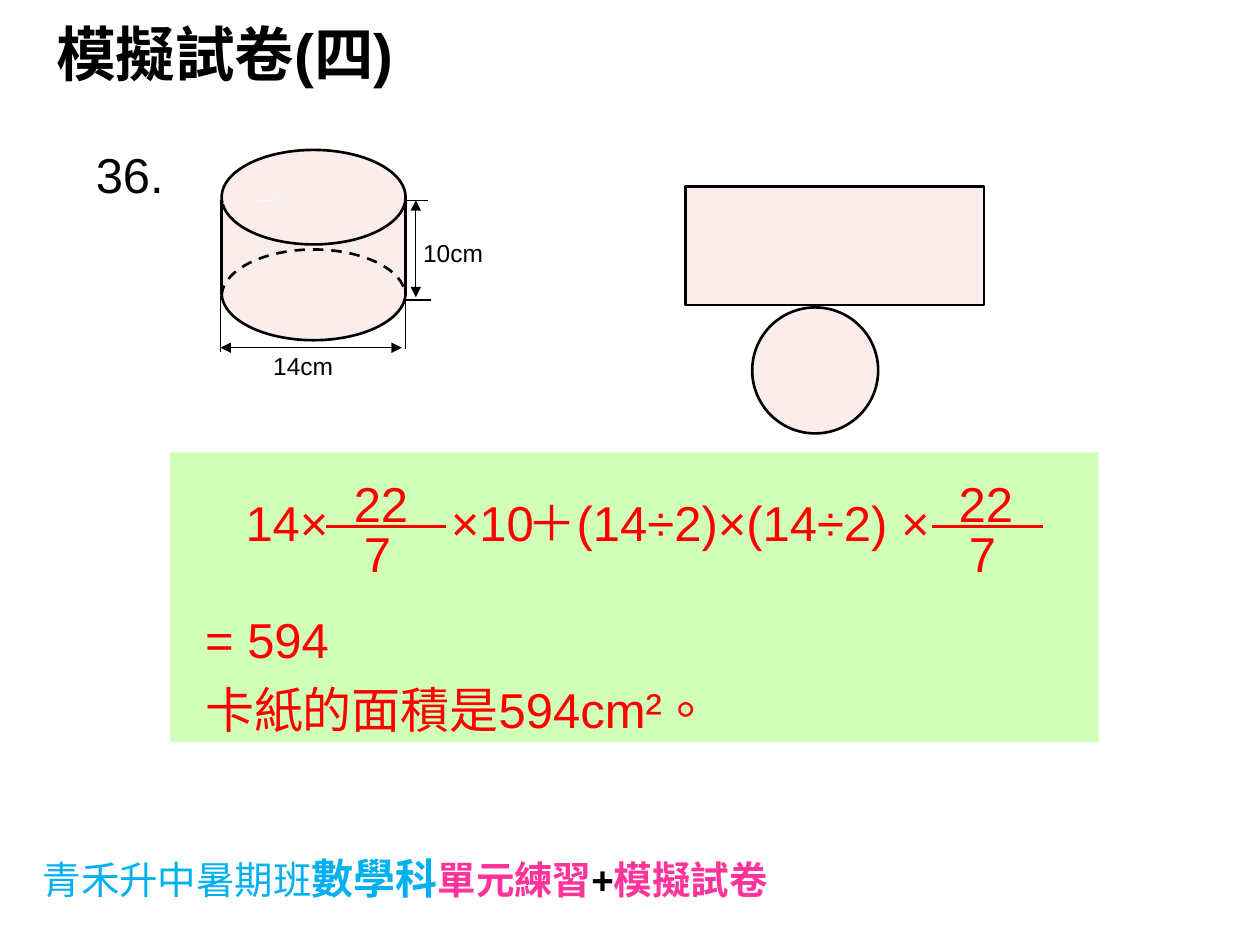
"""Build the worked answer to question 36, a card cylinder and its net."""
from lxml.etree import SubElement
from pptx import Presentation
from pptx.dml.color import RGBColor
from pptx.enum.dml import MSO_LINE
from pptx.enum.lang import MSO_LANGUAGE_ID
from pptx.enum.shapes import MSO_CONNECTOR, MSO_SHAPE
from pptx.enum.text import MSO_ANCHOR, MSO_AUTO_SIZE, PP_ALIGN
from pptx.oxml.ns import qn
from pptx.util import Inches, Pt

COLOURS = {
    "ink": "000000", "answer": "FF0000", "panel": "D1FFB7",
    "card": "FBEDEB", "sky": "00B0F0", "pink": "FF3399",
}
TC, SC = "Noto Sans CJK TC", "Noto Sans CJK SC"

deck = Presentation()
deck.slide_width, deck.slide_height = Inches(10), Inches(7.5)
page = deck.slides.add_slide(deck.slide_layouts[6])
column, row = deck.slide_width // 100, deck.slide_height // 75


def write(frame, paragraphs, anchor=MSO_ANCHOR.TOP, wrap=True):
    frame.word_wrap = wrap
    frame.auto_size = MSO_AUTO_SIZE.NONE
    frame.vertical_anchor = anchor
    for index, spans in enumerate(paragraphs):
        para = frame.add_paragraph() if index else frame.paragraphs[0]
        para.alignment = PP_ALIGN.LEFT
        for text, size, colour, bold, asian in spans:
            span = para.add_run()
            span.text = text
            span.font.size, span.font.bold = Pt(size), bold
            span.font.name = "Arial"
            span.font.color.rgb = RGBColor.from_string(COLOURS[colour])
            span.font.language_id = MSO_LANGUAGE_ID.TRADITIONAL_CHINESE
            SubElement(span.font._element, qn("a:ea"), typeface=asian)


def draw_line(x1, y1, x2, y2, colour="ink", weight=0.75, arrows=False):
    line = page.shapes.add_connector(
        MSO_CONNECTOR.STRAIGHT, int(x1 * column), int(y1 * row), int(x2 * column), int(y2 * row))
    line.line.color.rgb = RGBColor.from_string(COLOURS[colour])
    line.line.width = Pt(weight)
    if arrows:
        for end in ("a:headEnd", "a:tailEnd"):
            SubElement(line.line._get_or_add_ln(), qn(end), type="triangle")
    SubElement(line._element.spPr, qn("a:effectLst"))


panel = page.shapes.add_shape(
    MSO_SHAPE.RECTANGLE, int(13.5 * column), int(35.9 * row), int(73.7 * column), int(23 * row))
panel.shadow.inherit = False
panel.fill.solid()
panel.fill.fore_color.rgb = RGBColor.from_string(COLOURS["panel"])
panel.line.fill.background()
answers = ["= 594", "卡紙的面積是594cm²。"]
write(panel.text_frame, [[(text, 28, "answer", False, TC)] for text in answers], MSO_ANCHOR.BOTTOM)
panel.text_frame.margin_bottom = Inches(0.03)
for para in panel.text_frame.paragraphs:
    para.line_spacing = Pt(40)
    para._p.get_or_add_pPr().set("indent", str(Inches(0.18)))

footer = [
    ("青禾升中暑期班", 22, "sky", False, SC), ("數學科", 24, "sky", True, TC),
    ("單元練習", 22, "pink", True, SC), ("+", 22, "ink", True, SC),
    ("模擬試卷", 22, "pink", True, SC),
]
texts = [
    (2.4, 67.2, 68.5, 5.1, footer, MSO_ANCHOR.TOP),
    (3.5, 0.9, 33.9, 6.7, [("模擬試卷(四)", 34, "ink", True, TC)], MSO_ANCHOR.TOP),
    (32.6, 18.4, 7.7, 3.4, [("10cm", 14, "ink", False, TC)], MSO_ANCHOR.TOP),
    (20.7, 27.4, 10.7, 3.4, [("14cm", 14, "ink", False, TC)], MSO_ANCHOR.TOP),
    (40.9, 38.6, 37.9, 10.4, [("＋(14÷2)×(14÷2) ×", 28, "answer", False, TC)], MSO_ANCHOR.TOP),
]
for x in (27.1, 75.1):
    texts.append((x, 37.1, 8.6, 5.7, [("22", 28, "answer", False, TC)], MSO_ANCHOR.MIDDLE))
    texts.append((x + 0.8, 41, 5.5, 5.7, [("7", 28, "answer", False, TC)], MSO_ANCHOR.MIDDLE))
for x, y, width, height, spans, anchor in texts:
    box = page.shapes.add_textbox(
        int(x * column), int(y * row), int(width * column), int(height * row))
    write(box.text_frame, [spans], anchor)

number = page.shapes.add_textbox(
    int(5.2 * column), int(9.1 * row), int(10.2 * column), int(9.4 * row))
write(number.text_frame, [[("36.", 28, "ink", False, TC)]], MSO_ANCHOR.MIDDLE, False)
number.text_frame.paragraphs[0].alignment = PP_ALIGN.CENTER

product = page.shapes.add_textbox(
    int(18.5 * column), int(38.6 * row), int(28.8 * column), int(10.4 * row))
tabs = SubElement(product.text_frame.paragraphs[0]._p.get_or_add_pPr(), qn("a:tabLst"))
SubElement(tabs, qn("a:tab"), pos=str(Inches(1.63)), algn="l")
write(product.text_frame, [[("14×\t×10", 28, "answer", False, TC)]])

for start, end in ((25.9, 35.4), (74, 82.8)):
    draw_line(start, 41.8, end, 41.8, "answer", 1.5)
for y, start, end in ((15.9, 31.3, 34), (23.8, 31.6, 34.2)):
    draw_line(start, y, end, y)
for x, top, bottom in ((17.5, 23.5, 27.9), (32.2, 23.2, 27.7)):
    draw_line(x, top, x, bottom)
draw_line(33, 23.6, 33, 15.9, arrows=True)
draw_line(31.9, 27.6, 17.5, 27.6, arrows=True)

outline = page.shapes.build_freeform(int(17.7 * column), int(16 * row))
outline.add_line_segments(
    [(int(x * column), int(y * row)) for x, y in ((17.7, 23.2), (32.2, 23.3), (32.3, 15.9))])
wall = outline.convert_to_shape()
wall.shadow.inherit = False
wall.fill.solid()
wall.fill.fore_color.rgb = RGBColor.from_string(COLOURS["card"])
wall.line.fill.background()
for x in (17.6, 32.2):
    draw_line(x, 15.9, x, 23.4, weight=1.5)

outlines = [
    (MSO_SHAPE.RECTANGLE, 54.4, 14.8, 23.7, 9.4, (), None),
    (MSO_SHAPE.OVAL, 59.7, 24.4, 10, 10, (), None),
    (MSO_SHAPE.ARC, 17.6, 11.9, 14.6, 7.5, (105.85, 105.35), None),
    (MSO_SHAPE.ARC, 17.6, 19.8, 14.6, 7.5, (108.36, 213.9), MSO_LINE.DASH),
    (MSO_SHAPE.ARC, 17.6, 19.5, 14.6, 7.5, (214.15, 107.19), None),
]
for kind, x, y, width, height, angles, dash in outlines:
    shape = page.shapes.add_shape(
        kind, int(x * column), int(y * row), int(width * column), int(height * row))
    for index, angle in enumerate(angles):
        shape.adjustments[index] = angle
    shape.shadow.inherit = False
    shape.fill.solid()
    shape.fill.fore_color.rgb = RGBColor.from_string(COLOURS["card"])
    shape.line.color.rgb = RGBColor.from_string(COLOURS["ink"])
    shape.line.width = Pt(1.5)
    shape.line.dash_style = dash

deck.save("out.pptx")
